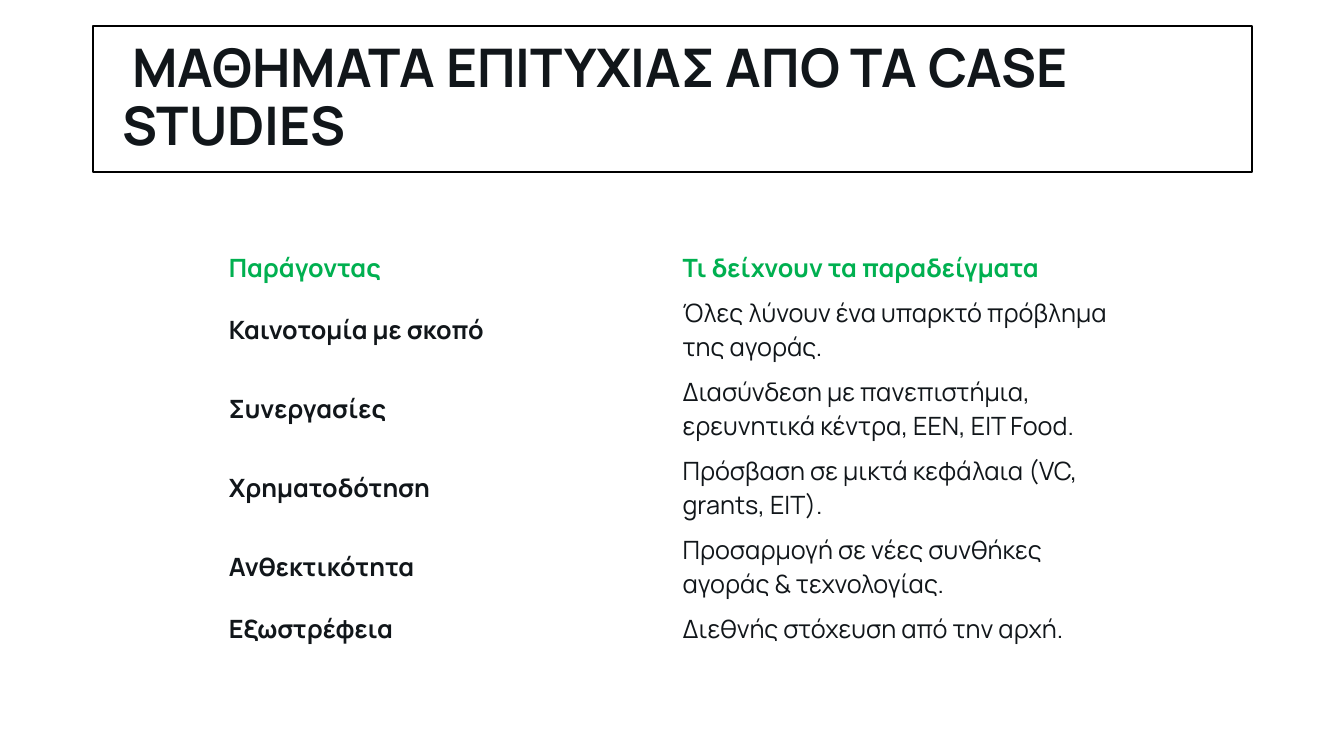
import pptx
import pptx.util
import pptx.dml.color
import pptx.enum.text
from pptx.util import Inches

TITLE = "ΜΑΘHΜΑΤΑ ΕΠΙΤΥΧIΑΣ ΑΠO ΤΑ CASE STUDIES"
HEADER = ("Παράγοντας", "Τι δείχνουν τα παραδείγματα")
FACTORS = [
    ("Καινοτομία με σκοπό", "Όλες λύνουν ένα υπαρκτό πρόβλημα της αγοράς."),
    ("Συνεργασίες", "Διασύνδεση με πανεπιστήμια, ερευνητικά κέντρα, EEN, EIT Food."),
    ("Χρηματοδότηση", "Πρόσβαση σε μικτά κεφάλαια (VC, grants, EIT)."),
    ("Ανθεκτικότητα", "Προσαρμογή σε νέες συνθήκες αγοράς & τεχνολογίας."),
    ("Εξωστρέφεια", "Διεθνής στόχευση από την αρχή."),
]
COLORS = {"text": "11161A", "header": "00B050", "border": "000000"}
FONT = "Manrope"
ONE_LINE, TWO_LINES = 0.44, 0.78
ROW_HEIGHTS = [ONE_LINE] + [TWO_LINES] * 4 + [ONE_LINE]
COLUMN_WIDTH = 4.5


def color(name):
    return pptx.dml.color.RGBColor.from_string(COLORS[name])


def add_text(paragraph, text, size, color_name, bold):
    paragraph.alignment = pptx.enum.text.PP_ALIGN.LEFT
    run = paragraph.add_run()
    run.text = text
    run.font.name = FONT
    run.font.size = pptx.util.Pt(size)
    run.font.bold = bold
    run.font.color.rgb = color(color_name)


presentation = pptx.Presentation()
presentation.slide_width = Inches(13.33)
presentation.slide_height = Inches(7.5)
slide = presentation.slides.add_slide(presentation.slide_layouts[5])

# Framed title
title = slide.shapes.title
title.left, title.top = Inches(0.92), Inches(0.26)
title.width, title.height = Inches(11.5), Inches(1.45)
title.line.color.rgb = color("border")
title.line.width = pptx.util.Pt(1.5)
frame = title.text_frame
frame.word_wrap = True
frame.auto_size = pptx.enum.text.MSO_AUTO_SIZE.NONE
frame.vertical_anchor = pptx.enum.text.MSO_ANCHOR.MIDDLE
paragraph = frame.paragraphs[0]
paragraph.line_spacing = 0.9
properties = paragraph._p.get_or_add_pPr()
properties.set("marL", str(Inches(0.19)))
properties.set("indent", str(Inches(0.1)))
add_text(paragraph, TITLE, 38, "text", True)

# Table of success factors
rows = [HEADER] + FACTORS
table = slide.shapes.add_table(
    len(rows), len(HEADER), Inches(2.17), Inches(2.44),
    Inches(COLUMN_WIDTH * len(HEADER)), Inches(sum(ROW_HEIGHTS))).table
table.first_row = False
table.horz_banding = False
for column in table.columns:
    column.width = Inches(COLUMN_WIDTH)
for row_index, (row, height) in enumerate(zip(rows, ROW_HEIGHTS)):
    table.rows[row_index].height = Inches(height)
    is_header = row_index == 0
    for column_index, text in enumerate(row):
        cell = table.cell(row_index, column_index)
        cell.fill.background()
        cell.vertical_anchor = pptx.enum.text.MSO_ANCHOR.MIDDLE
        add_text(cell.text_frame.paragraphs[0], text, 18,
                 "header" if is_header else "text",
                 is_header or column_index == 0)

presentation.save("out.pptx")
